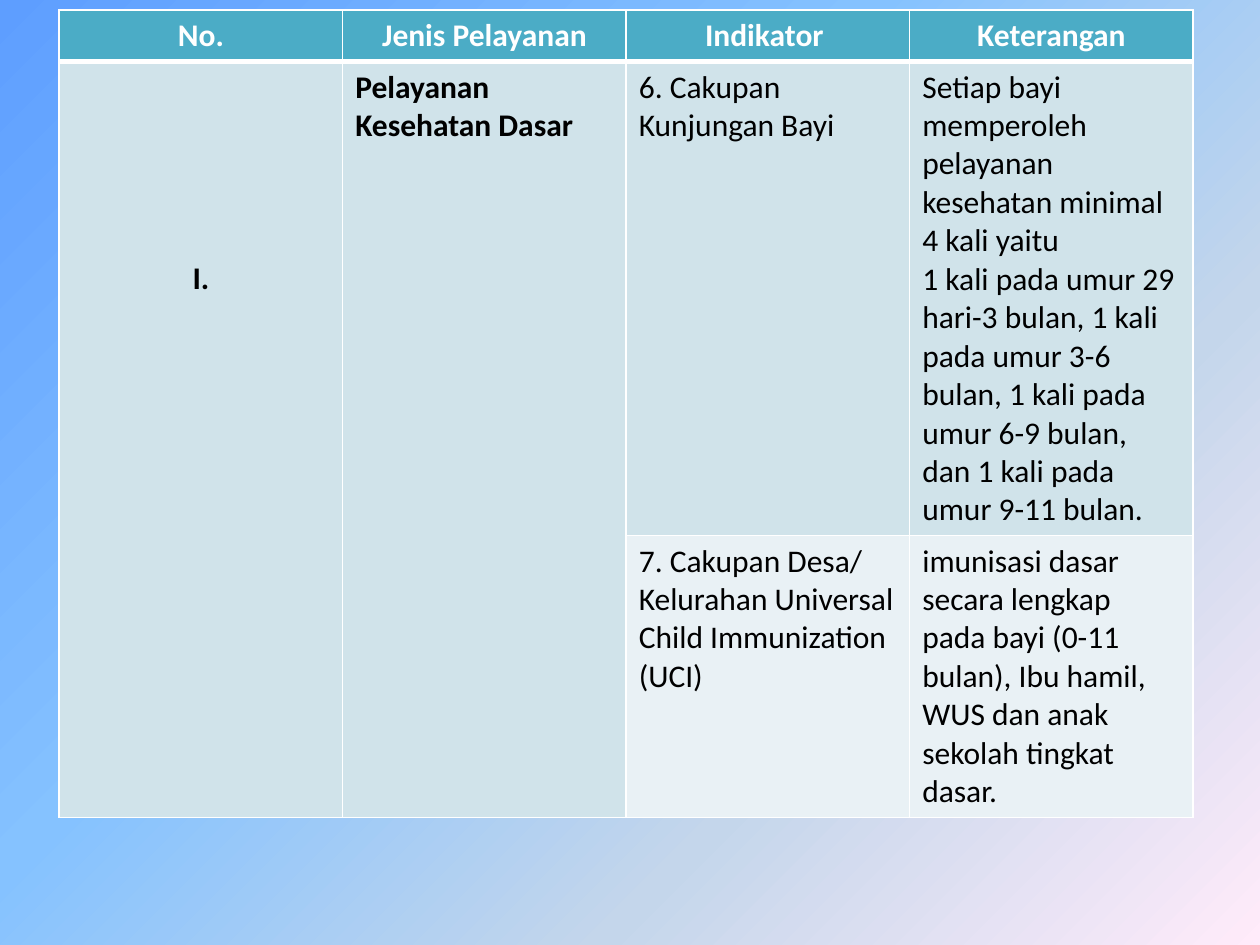
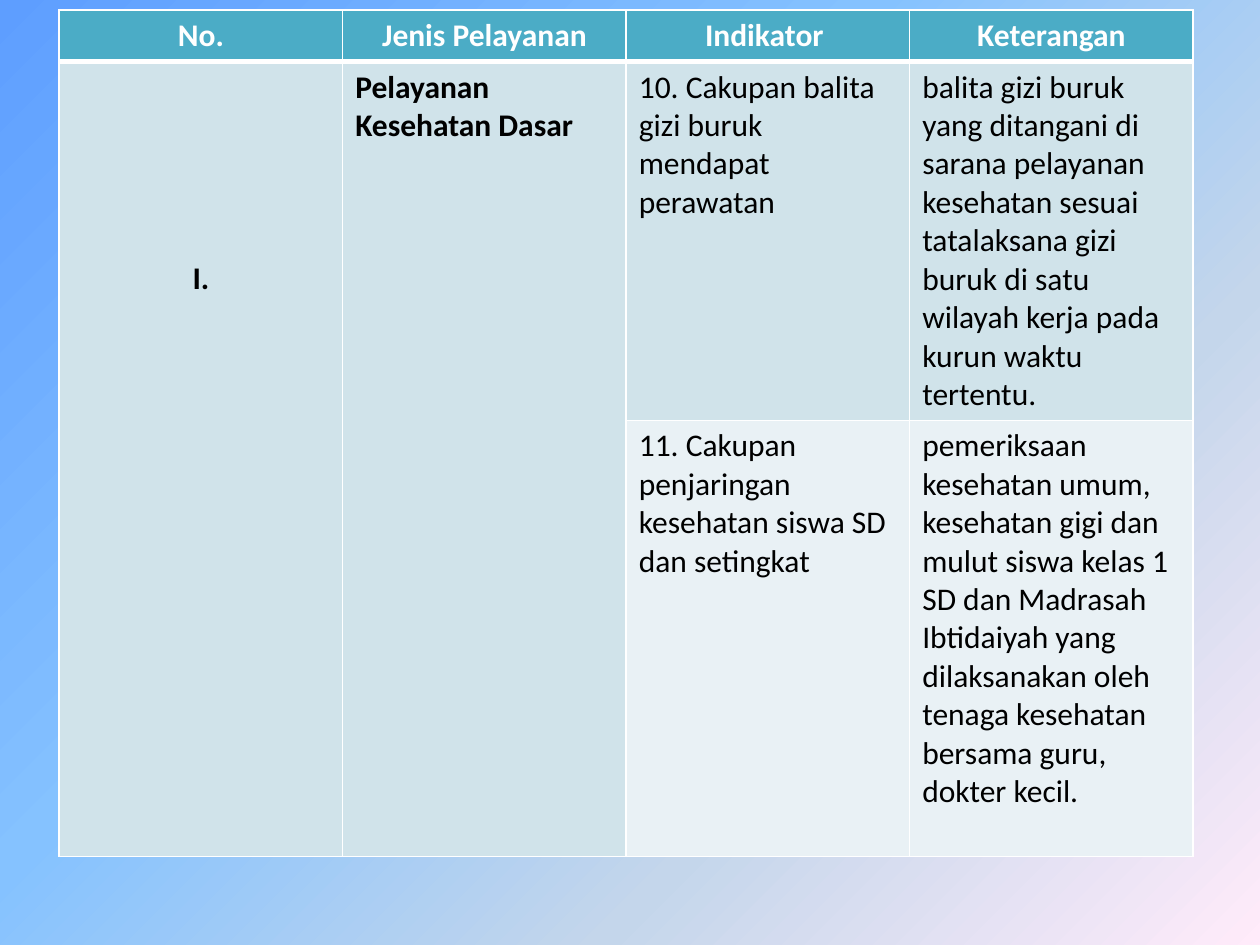
from lxml import etree
from pptx import Presentation
from pptx.dml.color import RGBColor
from pptx.enum.text import PP_ALIGN
from pptx.oxml.ns import qn
from pptx.util import Inches, Pt

CENTER, LEFT = PP_ALIGN.CENTER, PP_ALIGN.LEFT

# Content
HEADERS = ["No.", "Jenis Pelayanan", "Indikator ", "Keterangan"]
SERVICE = ["I.", "Pelayanan Kesehatan Dasar"]
SLIDES = [
    {"row_heights": [0.41, 3.76, 2.23],
     "indicators": [
         ("6. Cakupan Kunjungan Bayi",
          "Setiap bayi memperoleh pelayanan kesehatan minimal 4 kali yaitu\n"
          "1 kali pada umur 29 hari-3 bulan, 1 kali pada umur 3-6 bulan, "
          "1 kali pada umur 6-9 bulan, dan 1 kali pada umur 9-11 bulan."),
         ("7. Cakupan Desa/ Kelurahan Universal Child Immunization (UCI)",
          "imunisasi dasar secara lengkap pada bayi (0-11 bulan), Ibu hamil, "
          "WUS dan anak sekolah tingkat dasar."),
     ]},
    {"row_heights": [0.41, 2.84, 3.46],
     "indicators": [
         ("10. Cakupan balita gizi buruk mendapat perawatan",
          "balita gizi buruk yang ditangani di sarana pelayanan kesehatan sesuai "
          "tatalaksana gizi buruk di satu wilayah kerja pada kurun waktu tertentu."),
         ("11. Cakupan penjaringan kesehatan siswa SD dan setingkat",
          "pemeriksaan kesehatan umum, kesehatan gigi dan mulut siswa kelas 1 SD "
          "dan Madrasah Ibtidaiyah yang dilaksanakan oleh tenaga kesehatan "
          "bersama guru, dokter kecil."),
     ]},
]

# Shared look
COLORS = {"header": "4BACC6", "band_dark": "D0E3EA", "band_light": "E9F1F5",
          "border": "FFFFFF", "header_text": "FFFFFF", "text": "000000"}
ROW_FILLS = ["header", "band_dark", "band_light"]
BACKGROUND_STOPS = [(0, "5E9EFF"), (40, "85C2FF"), (70, "C4D6EB"), (100, "FFEBFA")]
FONT = {"name": "Calibri", "size": Pt(18)}
TABLE_LEFT, TABLE_TOP, COLUMN_WIDTH = 0.47, 0.08, 2.25
THIN, THICK = 1, 3
NUMBER_TOP_MARGIN = 1.57


def set_background(master):
    """Diagonal gradient behind every slide."""
    fill = master.background.fill
    fill.gradient()
    fill.gradient_angle = 315
    stops = next(master.element.iter(qn("a:gsLst")))
    for stop in list(stops):
        stops.remove(stop)
    for percent, color in BACKGROUND_STOPS:
        stop = etree.SubElement(stops, qn("a:gs"), pos=str(percent * 1000))
        etree.SubElement(stop, qn("a:srgbClr"), val=color)


def set_borders(cell, widths):
    properties = cell._tc.get_or_add_tcPr()
    for side, width in widths.items():
        line = etree.SubElement(properties, qn(f"a:ln{side}"), w=str(Pt(width)))
        fill = etree.SubElement(line, qn("a:solidFill"))
        etree.SubElement(fill, qn("a:srgbClr"), val=COLORS["border"])


def format_cell(cell, row, column):
    # The rule under the header is shared by rows 0 and 1
    set_borders(cell, {"L": THIN, "R": THIN,
                       "T": THICK if row == 1 else THIN,
                       "B": THICK if row == 0 else THIN})
    cell.fill.solid()
    cell.fill.fore_color.rgb = RGBColor.from_string(COLORS[ROW_FILLS[row]])
    text_color = COLORS["header_text" if row == 0 else "text"]
    for paragraph in cell.text_frame.paragraphs:
        paragraph.alignment = CENTER if row == 0 or column == 0 else LEFT
        for run in paragraph.runs:
            for name, value in FONT.items():
                setattr(run.font, name, value)
            run.font.bold = row == 0 or column < 2
            run.font.color.rgb = RGBColor.from_string(text_color)


def add_indicator_table(slide, indicators, row_heights):
    first, *others = indicators
    rows = [HEADERS, [*SERVICE, *first]] + [["", "", *other] for other in others]
    table = slide.shapes.add_table(
        len(rows), len(HEADERS), Inches(TABLE_LEFT), Inches(TABLE_TOP),
        Inches(COLUMN_WIDTH * len(HEADERS)), Inches(sum(row_heights))).table
    for column in table.columns:
        column.width = Inches(COLUMN_WIDTH)
    for row, (texts, height) in enumerate(zip(rows, row_heights)):
        table.rows[row].height = Inches(height)
        for column, text in enumerate(texts):
            cell = table.cell(row, column)
            cell.text = text
            format_cell(cell, row, column)

    # Number and service span all indicators
    for column in range(len(SERVICE)):
        table.cell(1, column).merge(table.cell(len(rows) - 1, column))
    table.cell(1, 0).margin_top = Inches(NUMBER_TOP_MARGIN)


def main():
    presentation = Presentation()
    presentation.slide_width, presentation.slide_height = Inches(10), Inches(7.5)
    set_background(presentation.slide_master)
    blank_layout = presentation.slide_layouts[6]
    for content in SLIDES:
        add_indicator_table(presentation.slides.add_slide(blank_layout), **content)
    presentation.save("out.pptx")


if __name__ == "__main__":
    main()
